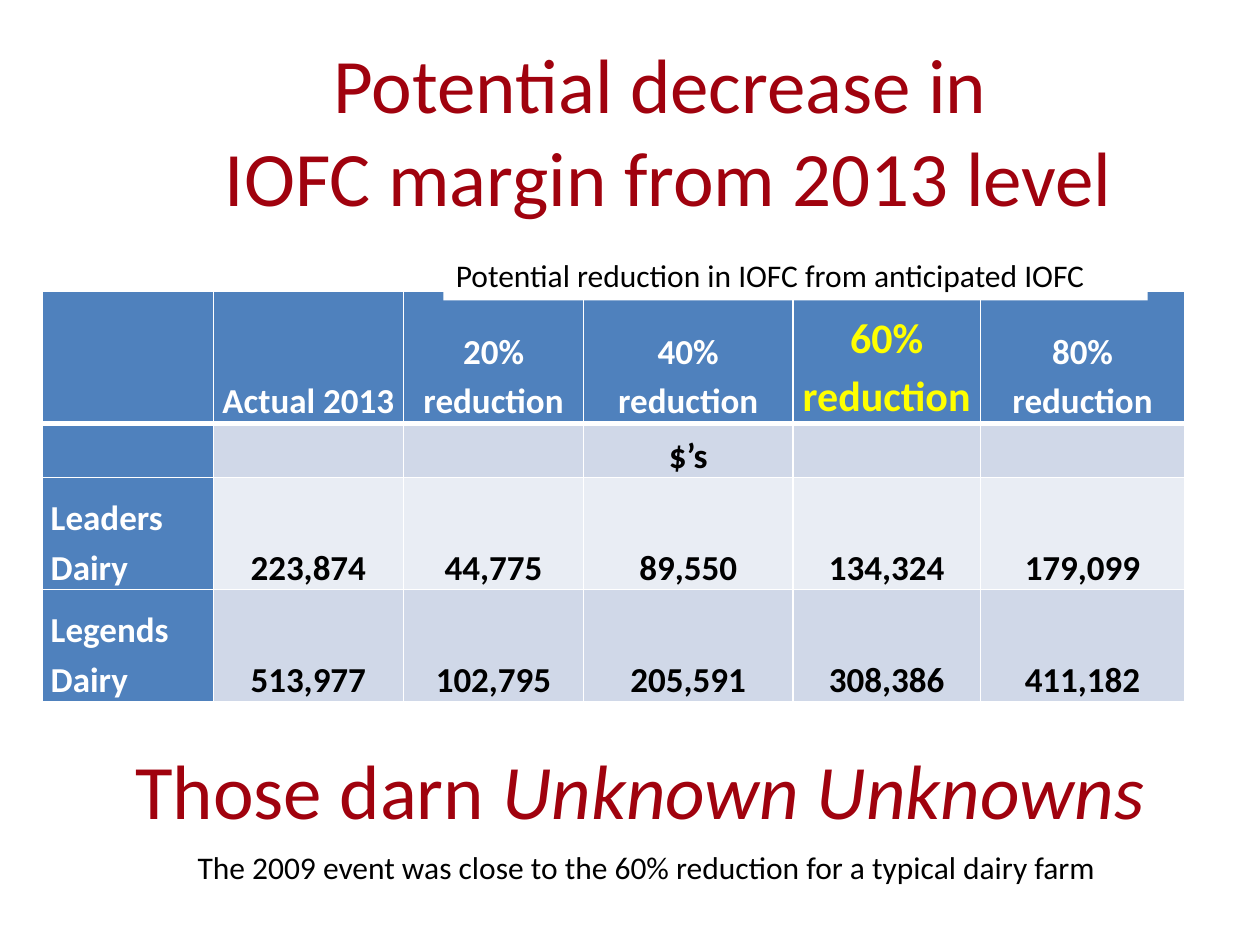
import pptx
import pptx.dml.color
import pptx.enum.shapes
import pptx.enum.text
import pptx.oxml
import pptx.oxml.ns
import pptx.util

Pt = pptx.util.Pt
ALIGN = pptx.enum.text.PP_ALIGN
ANCHOR = pptx.enum.text.MSO_ANCHOR
COLORS = {
    "red": "A0020E",
    "blue": "4F81BD",
    "band": "D0D8E8",
    "pale": "E9EDF4",
    "white": "FFFFFF",
    "black": "000000",
    "yellow": "FFFF00",
}


class SlideBuilder:
    """Holds the slide and its style, and adds each kind of element."""

    def __init__(self, slide, font="Calibri"):
        self.slide = slide
        self.font = font

    def rgb(self, color):
        return pptx.dml.color.RGBColor.from_string(COLORS[color])

    def fill(self, target, color):
        target.fill.solid()
        target.fill.fore_color.rgb = self.rgb(color)

    def run(self, paragraph, text, size, color, bold=False, italic=False):
        run = paragraph.add_run()
        run.text = text
        run.font.name = self.font
        run.font.size = Pt(size)
        run.font.bold = bold
        run.font.italic = italic
        run.font.color.rgb = self.rgb(color)

    def headline(self, left, top, width, height, lines):
        box = self.slide.shapes.add_textbox(Pt(left), Pt(top), Pt(width), Pt(height))
        frame = box.text_frame
        frame.word_wrap = True
        frame.vertical_anchor = ANCHOR.MIDDLE
        paragraph = frame.paragraphs[0]
        paragraph.alignment = ALIGN.CENTER
        for index, line in enumerate(lines):
            if index:
                paragraph.add_line_break()
            for text, italic in line:
                self.run(paragraph, text, 44, "red", italic=italic)

    def caption(self, left, top, width, height, text, backing=None):
        if backing:
            box = self.slide.shapes.add_shape(
                pptx.enum.shapes.MSO_SHAPE.RECTANGLE,
                Pt(left), Pt(top), Pt(width), Pt(height))
            box.shadow.inherit = False
            box.line.fill.background()
            self.fill(box, backing)
        else:
            box = self.slide.shapes.add_textbox(Pt(left), Pt(top), Pt(width), Pt(height))
        frame = box.text_frame
        frame.word_wrap = True
        frame.vertical_anchor = ANCHOR.TOP
        frame.paragraphs[0].alignment = ALIGN.LEFT
        self.run(frame.paragraphs[0], text, 18, "black")

    def borders(self, cell, widths):
        properties = cell._tc.get_or_add_tcPr()
        namespace = pptx.oxml.ns.nsdecls("a")
        for side, width in widths.items():
            properties.append(pptx.oxml.parse_xml(
                f'<a:ln{side} {namespace} w="{Pt(width)}"><a:solidFill>'
                f'<a:srgbClr val="{COLORS["white"]}"/></a:solidFill></a:ln{side}>'))

    def cell(self, cell, text, fill, color, size, align, widths):
        self.borders(cell, widths)
        self.fill(cell, fill)
        cell.vertical_anchor = ANCHOR.BOTTOM
        cell.margin_left = cell.margin_right = Pt(5)
        cell.margin_top = cell.margin_bottom = 0
        if not text:
            return
        frame = cell.text_frame
        for index, line in enumerate(text.split("\n")):
            paragraph = frame.add_paragraph() if index else frame.paragraphs[0]
            paragraph.alignment = align
            paragraph.line_spacing = 1.15
            self.run(paragraph, line, size, color, bold=True)

    def table(self, left, top, widths, heights, rows, highlight):
        table = self.slide.shapes.add_table(
            len(rows), len(widths), Pt(left), Pt(top),
            Pt(sum(widths)), Pt(sum(heights))).table
        for column, width in zip(table.columns, widths):
            column.width = Pt(width)
        for row, height in zip(table.rows, heights):
            row.height = Pt(height)
        for r, texts in enumerate(rows):
            for c, text in enumerate(texts):
                heading = r == 0 or c == 0
                fill = "blue" if heading else "band" if r % 2 else "pale"
                color = "white" if heading else "black"
                size = 20
                if (r, c) == highlight:
                    color, size = "yellow", 24
                align = ALIGN.CENTER if c else ALIGN.LEFT
                lines = {"L": 1, "R": 1, "T": 3 if r == 1 else 1, "B": 1 if r else 3}
                self.cell(table.cell(r, c), text, fill, color, size, align, lines)


def main():
    deck = pptx.Presentation()
    deck.slide_width, deck.slide_height = Pt(720), Pt(540)
    builder = SlideBuilder(deck.slides.add_slide(deck.slide_layouts[6]))

    builder.headline(58.3, 28.8, 648, 90, [
        [("Potential decrease in ", False)],
        [("IOFC margin from 2013 level", False)],
    ])
    margins = [
        ["", "Actual 2013", "20% reduction", "40%\nreduction",
         "60% reduction", "80% reduction"],
        ["", "", "", "$’s", "", ""],
        ["Leaders Dairy", "223,874", "44,775", "89,550", "134,324", "179,099"],
        ["Legends Dairy", "513,977", "102,795", "205,591", "308,386", "411,182"],
    ]
    builder.table(24, 166.3, [97.9, 108.7, 103, 119.5, 107.3, 116.6],
                  [75.6, 31.1, 64, 64], margins, highlight=(0, 4))
    builder.headline(41.8, 405.4, 648, 90, [
        [("Those darn ", False), ("Unknown Unknowns", True)],
    ])
    builder.caption(253.4, 142.6, 402.5, 29,
                    "Potential reduction in IOFC from anticipated IOFC", "white")
    builder.caption(105.8, 481, 540.7, 29,
                    "The 2009 event was close to the 60% reduction for a typical dairy farm")
    deck.save("out.pptx")


if __name__ == "__main__":
    main()
